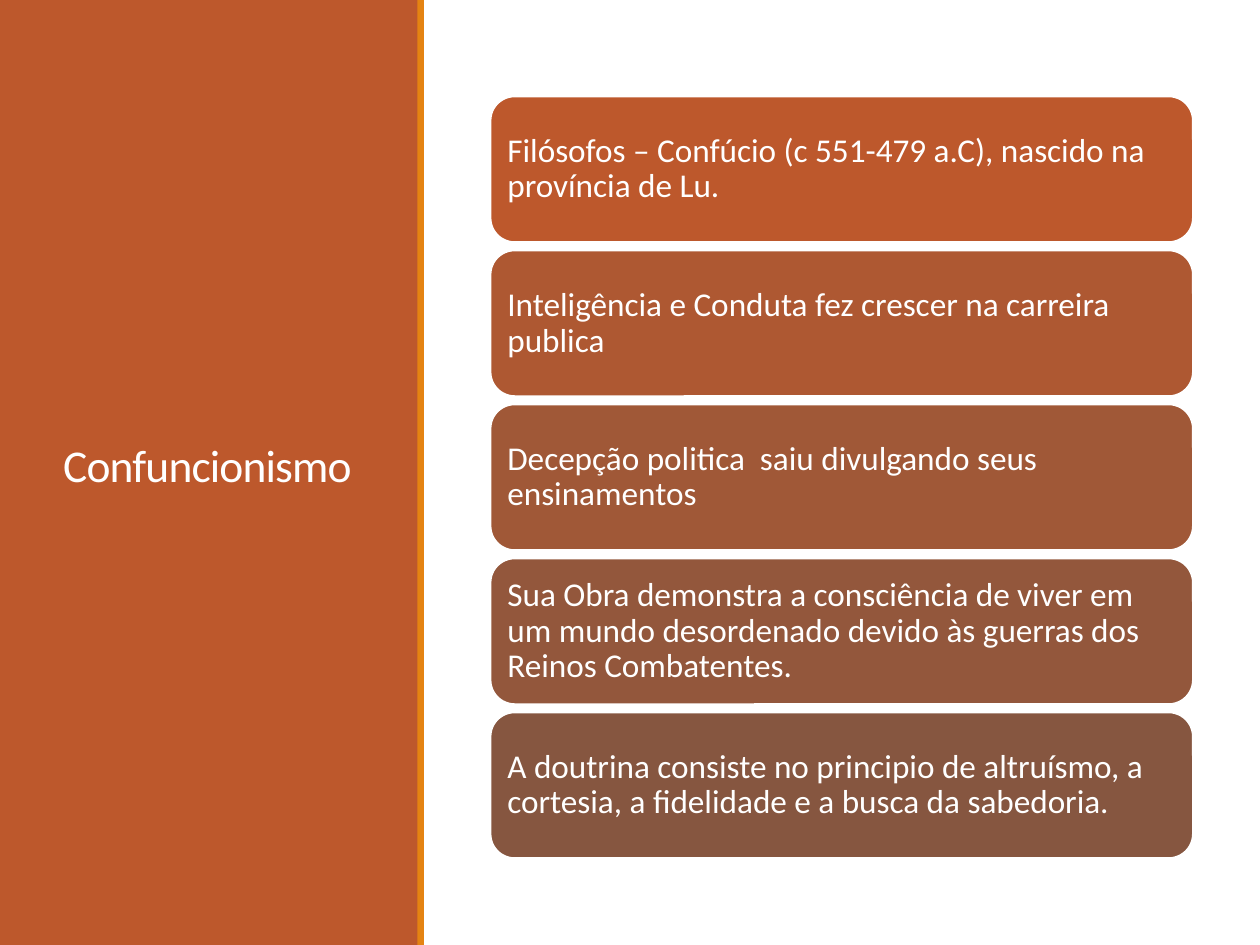
import pptx
import pptx.dml.color
import pptx.enum.shapes
import pptx.enum.text
import pptx.util

Pt = pptx.util.Pt
SHAPES = pptx.enum.shapes.MSO_SHAPE

TITLE = "Confuncionismo"
CARDS = [
    ("Filósofos – Confúcio (c 551-479 a.C), nascido na província de Lu.", "BD582C"),
    ("Inteligência e Conduta fez crescer na carreira publica", "AE5832"),
    ("Decepção politica  saiu divulgando seus ensinamentos", "A05837"),
    ("Sua Obra demonstra a consciência de viver em um mundo desordenado "
     "devido às guerras dos Reinos Combatentes.", "93573C"),
    ("A doutrina consiste no principio de altruísmo, a cortesia, "
     "a fidelidade e a busca da sabedoria.", "865640"),
]
SLIDE_WIDTH, SLIDE_HEIGHT = 720, 540
CARD_LEFT, CARD_TOP, CARD_WIDTH, CARD_HEIGHT = 280.2, 55, 401.6, 83.5
CARD_PITCH = 88


def color(value):
    return pptx.dml.color.RGBColor.from_string(value)


def add_block(slide, kind, left, top, width, height, fill, line=None):
    shape = slide.shapes.add_shape(kind, Pt(left), Pt(top), Pt(width), Pt(height))
    shape.shadow.inherit = False
    shape.fill.solid()
    shape.fill.fore_color.rgb = color(fill)
    if line:
        shape.line.color.rgb = color(line)
        shape.line.width = Pt(1.25)
    else:
        shape.line.fill.background()
    return shape


def write_text(shape, text, *, size, line_spacing, inset_x, inset_y, tracking=0):
    frame = shape.text_frame
    frame.word_wrap = True
    frame.vertical_anchor = pptx.enum.text.MSO_ANCHOR.MIDDLE
    frame.margin_left = frame.margin_right = Pt(inset_x)
    frame.margin_top = frame.margin_bottom = Pt(inset_y)
    paragraph = frame.paragraphs[0]
    paragraph.alignment = pptx.enum.text.PP_ALIGN.LEFT
    paragraph.line_spacing = line_spacing
    run = paragraph.add_run()
    run.text = text
    run.font.name = "Calibri"
    run.font.size = Pt(size)
    run.font.color.rgb = color("FFFFFF")
    if tracking:
        run.font._element.set("spc", str(round(tracking * 100)))


def main():
    presentation = pptx.Presentation()
    presentation.slide_width = Pt(SLIDE_WIDTH)
    presentation.slide_height = Pt(SLIDE_HEIGHT)
    slide = presentation.slides.add_slide(presentation.slide_layouts[6])

    add_block(slide, SHAPES.RECTANGLE, 0, 0, 239, SLIDE_HEIGHT, "BD582C")
    title = slide.shapes.add_textbox(Pt(29), Pt(41), Pt(182), Pt(454))
    write_text(title, TITLE, size=26, line_spacing=0.85,
               inset_x=7.2, inset_y=3.6, tracking=-0.5)
    add_block(slide, SHAPES.RECTANGLE, 238.5, 0, 3.8, SLIDE_HEIGHT, "E48312")

    for index, (text, fill) in enumerate(CARDS):
        card = add_block(slide, SHAPES.ROUNDED_RECTANGLE, CARD_LEFT,
                         CARD_TOP + index * CARD_PITCH, CARD_WIDTH, CARD_HEIGHT,
                         fill, line="FFFFFF")
        write_text(card, text, size=19, line_spacing=0.9, inset_x=5.7, inset_y=5.7)

    presentation.save("out.pptx")


if __name__ == "__main__":
    main()
